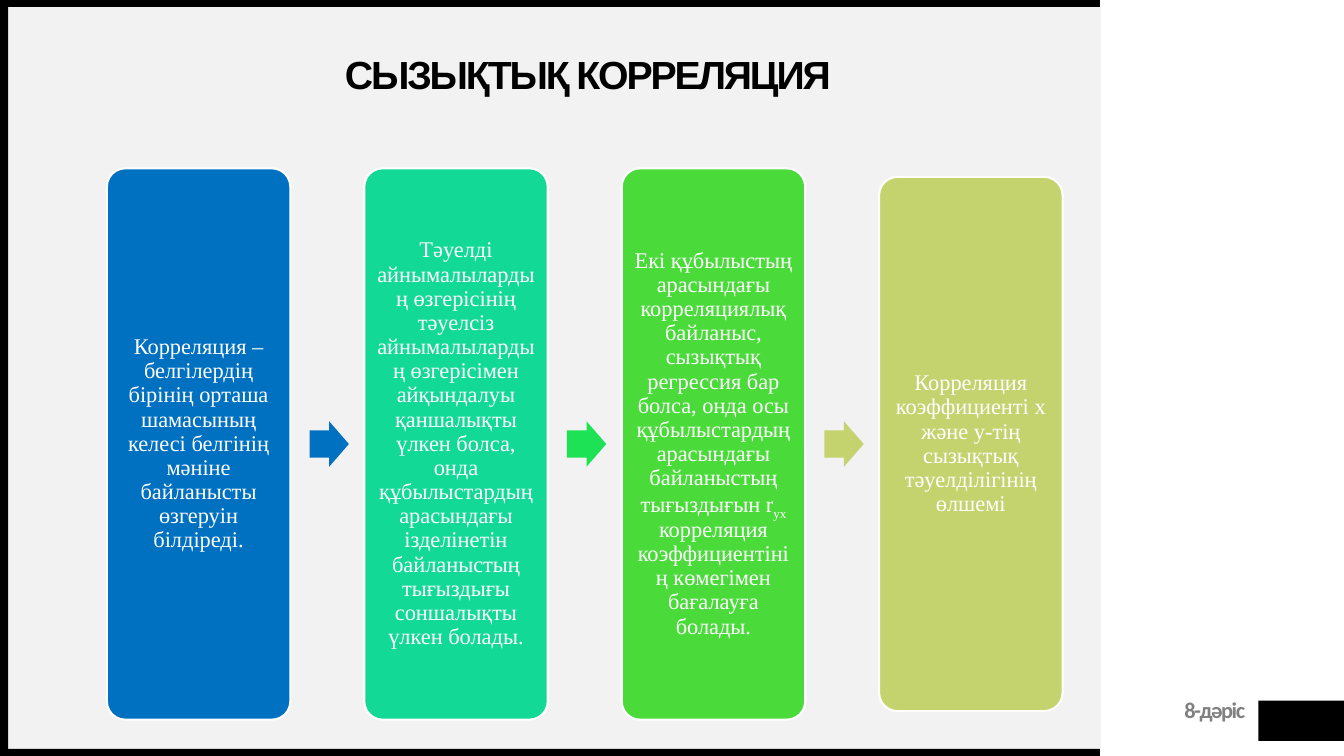
from pptx import Presentation
from pptx.dml.color import RGBColor
from pptx.enum.shapes import MSO_SHAPE as SHAPE
from pptx.enum.text import MSO_ANCHOR as ANCHOR, MSO_AUTO_SIZE as AUTO, PP_ALIGN as ALIGN
from pptx.util import Inches, Pt

BLACK = RGBColor(0x00, 0x00, 0x00)
WHITE = RGBColor(0xFF, 0xFF, 0xFF)
GREY = RGBColor(0x80, 0x80, 0x80)
PANEL = RGBColor(0xF2, 0xF2, 0xF2)
BLUE = RGBColor(0x00, 0x70, 0xC0)
TEAL = RGBColor(0x12, 0xD9, 0x95)
EMERALD = RGBColor(0x1E, 0xE2, 0x55)
GREEN = RGBColor(0x4A, 0xDB, 0x3A)
OLIVE = RGBColor(0xC4, 0xD3, 0x6D)

# Each card: fill, height, text runs (every second run is a subscript)
CARDS = [
    (BLUE, 5.47, ["Корреляция – белгілердің бірінің орташа шамасының келесі белгінің "
                  "мәніне байланысты өзгеруін білдіреді."]),
    (TEAL, 5.47, ["Тәуелді айнымалылардың өзгерісінің тәуелсіз айнымалылардың "
                  "өзгерісімен айқындалуы қаншалықты үлкен болса, онда құбылыстардың "
                  "арасындағы ізделінетін байланыстың тығыздығы соншалықты үлкен болады."]),
    (GREEN, 5.47, ["Екі құбылыстың арасындағы корреляциялық байланыс, сызықтық регрессия "
                   "бар болса, онда осы құбылыстардың арасындағы байланыстың тығыздығын r",
                   "yx", " корреляция коэффициентінің көмегімен бағалауға болады."]),
    (OLIVE, 5.3, ["Корреляция коэффициенті х және у-тің сызықтық тәуелділігінің өлшемі"]),
]
ARROW_FILLS = [BLUE, EMERALD, OLIVE]

CARD_LEFT, CARD_STEP, CARD_W = 1.06, 2.553, 1.82
ROW_MIDDLE = 4.405
ARROW_OFFSET, ARROW_W, ARROW_H = 2.01, 0.39, 0.45


def add_block(s, kind, box, fill):
    sp = s.shapes.add_shape(kind, *map(Inches, box))
    sp.shadow.inherit = False
    sp.fill.solid()
    sp.fill.fore_color.rgb = fill
    sp.line.fill.background()
    return sp


def set_insets(tf, inset):
    tf.margin_left = tf.margin_top = tf.margin_right = tf.margin_bottom = Inches(inset)


def format_run(r, name, size, color, bold=False, spacing=None):
    """Set the run's font; spacing is in hundredths of a point."""
    r.font.name, r.font.size, r.font.bold = name, Pt(size), bold
    r.font.color.rgb = color
    if spacing:
        r.font._element.set("spc", str(spacing))


def add_frame(s):
    for box, fill in [
        ((0.08, 0.07, 10.84, 7.36), PANEL),
        ((12.48, 6.95, 0.86, 0.4), BLACK),
        ((0, 7.43, 10.91, 0.07), BLACK),
        ((0, 0, 10.91, 0.07), BLACK),
        ((0, 0.03, 0.08, 7.47), BLACK),
    ]:
        add_block(s, SHAPE.RECTANGLE, box, fill)


def add_lecture_label(s):
    tf = s.shapes.add_textbox(*map(Inches, (10.53, 6.94, 1.82, 0.25))).text_frame
    tf.word_wrap = True
    set_insets(tf, 0)
    tf.margin_top = Inches(0.04)
    p = tf.paragraphs[0]
    p.text = "8-дәріс"
    p.alignment, p.line_spacing = ALIGN.RIGHT, Pt(14)
    format_run(p.runs[0], "Calibri", 16, GREY, True, -100)


def set_title(s):
    title = s.shapes.title
    s.shapes.element.append(title.element)  # bring above the panel
    title.left, title.top, title.width, title.height = map(Inches, (1.08, 0.3, 9.5, 0.92))
    tf = title.text_frame
    tf.text = "СЫЗЫҚТЫҚ КОРРЕЛЯЦИЯ"
    tf.auto_size, tf.word_wrap, tf.vertical_anchor = AUTO.NONE, True, ANCHOR.MIDDLE
    set_insets(tf, 0)
    p = tf.paragraphs[0]
    p.alignment, p.line_spacing = ALIGN.CENTER, 0.9
    format_run(p.runs[0], "Arial", 28, BLACK, True, -150)


def add_card(s, left, height, fill, texts):
    sp = add_block(s, SHAPE.ROUNDED_RECTANGLE,
                   (left, ROW_MIDDLE - height / 2, CARD_W, height), fill)
    sp.adjustments[0] = 0.1
    sp.line.color.rgb = WHITE
    sp.line.width = Pt(1.5)
    tf = sp.text_frame
    tf.word_wrap, tf.vertical_anchor = True, ANCHOR.MIDDLE
    set_insets(tf, 0.07)
    p = tf.paragraphs[0]
    p.alignment, p.line_spacing = ALIGN.CENTER, 0.9
    for i, text in enumerate(texts):
        r = p.add_run()
        r.text = text
        format_run(r, "Times New Roman", 16, WHITE)
        if i % 2:
            r.font._element.set("baseline", "-25000")


def add_arrow(s, left, fill):
    sp = add_block(s, SHAPE.RIGHT_ARROW,
                   (left, ROW_MIDDLE - ARROW_H / 2, ARROW_W, ARROW_H), fill)
    sp.adjustments[0] = 0.6
    sp.adjustments[1] = 0.5


def main():
    prs = Presentation()
    prs.slide_width, prs.slide_height = Inches(13.33), Inches(7.5)
    s = prs.slides.add_slide(prs.slide_layouts[5])
    add_frame(s)
    add_lecture_label(s)
    set_title(s)
    for i, (fill, height, texts) in enumerate(CARDS):
        add_card(s, CARD_LEFT + i * CARD_STEP, height, fill, texts)
    for i, fill in enumerate(ARROW_FILLS):
        add_arrow(s, CARD_LEFT + ARROW_OFFSET + i * CARD_STEP, fill)
    prs.save("out.pptx")


if __name__ == "__main__":
    main()
